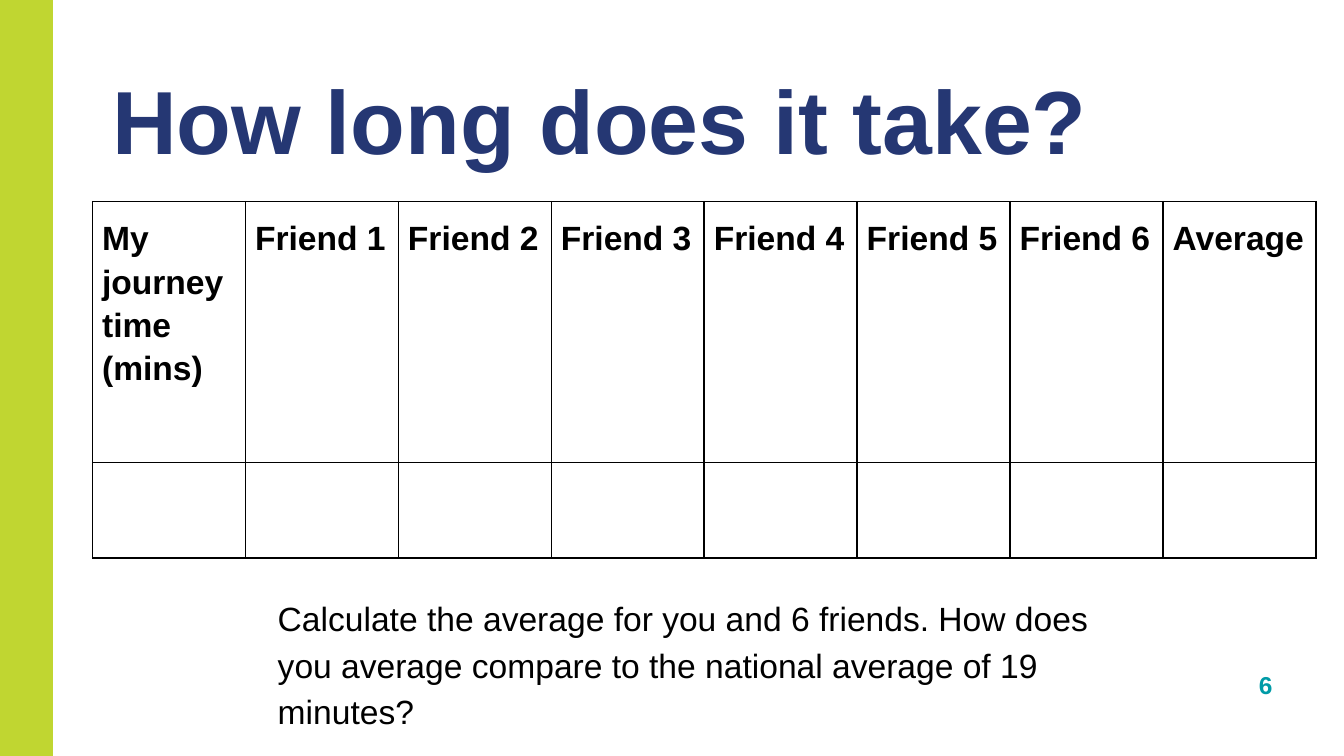
from lxml.etree import SubElement
from pptx import Presentation
from pptx.dml.color import RGBColor
from pptx.enum.shapes import MSO_SHAPE
from pptx.enum.text import MSO_ANCHOR, MSO_AUTO_SIZE, PP_ALIGN
from pptx.oxml.ns import qn
from pptx.util import Cm, Pt

TITLE = "How long does it take?"
HEADERS = ["My journey time (mins)", *(f"Friend {number}" for number in range(1, 7)), "Average"]
TASK = ("Calculate the average for you and 6 friends. How does you average "
        "compare to the national average of 19 minutes?")
PAGE_NUMBER = "6"

FONT = "Arial"
LIME = RGBColor(0xC0, 0xD6, 0x31)
NAVY = RGBColor(0x25, 0x37, 0x73)
TEAL = RGBColor(0x00, 0x9B, 0xA7)
BLACK = RGBColor(0, 0, 0)

COLUMN_WIDTH = Cm(2.89)
ROW_HEIGHTS = [Cm(4.93), Cm(1.81)]


def write(frame, text, size, color, bold=False, align=PP_ALIGN.LEFT, spacing=1.0):
    frame.text = text
    frame.word_wrap = True
    para = frame.paragraphs[0]
    para.alignment = align
    para.line_spacing = spacing
    for span in para.runs:
        span.font.name = FONT
        span.font.size = Pt(size)
        span.font.bold = bold
        span.font.color.rgb = color


def add_borders(cell):
    """Draw a thin black line on all four sides of a cell."""
    properties = cell._tc.get_or_add_tcPr()
    for position, side in enumerate(("a:lnL", "a:lnR", "a:lnT", "a:lnB")):
        line = SubElement(properties, qn(side), w=str(Pt(1)))
        fill = SubElement(line, qn("a:solidFill"))
        SubElement(fill, qn("a:srgbClr"), val=str(BLACK))
        properties.insert(position, line)


def add_bar(page):
    bar = page.shapes.add_shape(MSO_SHAPE.RECTANGLE, Cm(-0.3), Cm(-0.1), Cm(1.3), Cm(14.5))
    bar.shadow.inherit = False
    bar.fill.solid()
    bar.fill.fore_color.rgb = LIME
    bar.line.fill.background()


def add_title(page):
    title = page.shapes.title
    title.left, title.top, title.width, title.height = Cm(0), Cm(0.97), Cm(22.68), Cm(3.56)
    frame = title.text_frame
    write(frame, TITLE, 48, NAVY, bold=True, align=PP_ALIGN.CENTER)
    frame.auto_size = MSO_AUTO_SIZE.NONE
    frame.vertical_anchor = MSO_ANCHOR.TOP
    frame.margin_left = frame.margin_right = Cm(0.25)
    frame.margin_top = frame.margin_bottom = Cm(0.25)


def add_journey_table(page):
    table = page.shapes.add_table(len(ROW_HEIGHTS), len(HEADERS), Cm(1.75), Cm(3.81),
                                  COLUMN_WIDTH * len(HEADERS), sum(ROW_HEIGHTS)).table
    table.first_row = table.horz_banding = False
    for column in table.columns:
        column.width = COLUMN_WIDTH
    for row, height in zip(table.rows, ROW_HEIGHTS):
        row.height = height
    for cell in table.iter_cells():
        cell.fill.background()
        cell.margin_left = cell.margin_right = Cm(0.18)
        cell.margin_top = cell.margin_bottom = Cm(0.25)
        add_borders(cell)
    for cell, header in zip(table.rows[0].cells, HEADERS):
        write(cell.text_frame, header, 18, BLACK, bold=True, spacing=1.15)


def add_page_number(page):
    box = page.shapes.add_textbox(Cm(22.3), Cm(12.52), Cm(2), Cm(0.82))
    write(box.text_frame, PAGE_NUMBER, 13.1, TEAL, bold=True, align=PP_ALIGN.RIGHT)
    box.text_frame.vertical_anchor = MSO_ANCHOR.BOTTOM


def add_task(page):
    box = page.shapes.add_textbox(Cm(5), Cm(11.07), Cm(16.66), Cm(2.92))
    write(box.text_frame, TASK, 18, BLACK, spacing=1.15)


def main():
    deck = Presentation()
    deck.slide_width, deck.slide_height = Cm(25.4), Cm(14.29)
    page = deck.slides.add_slide(deck.slide_layouts.get_by_name("Title Only"))
    add_bar(page)
    add_title(page)
    add_journey_table(page)
    add_page_number(page)
    add_task(page)
    deck.save("out.pptx")


if __name__ == "__main__":
    main()
